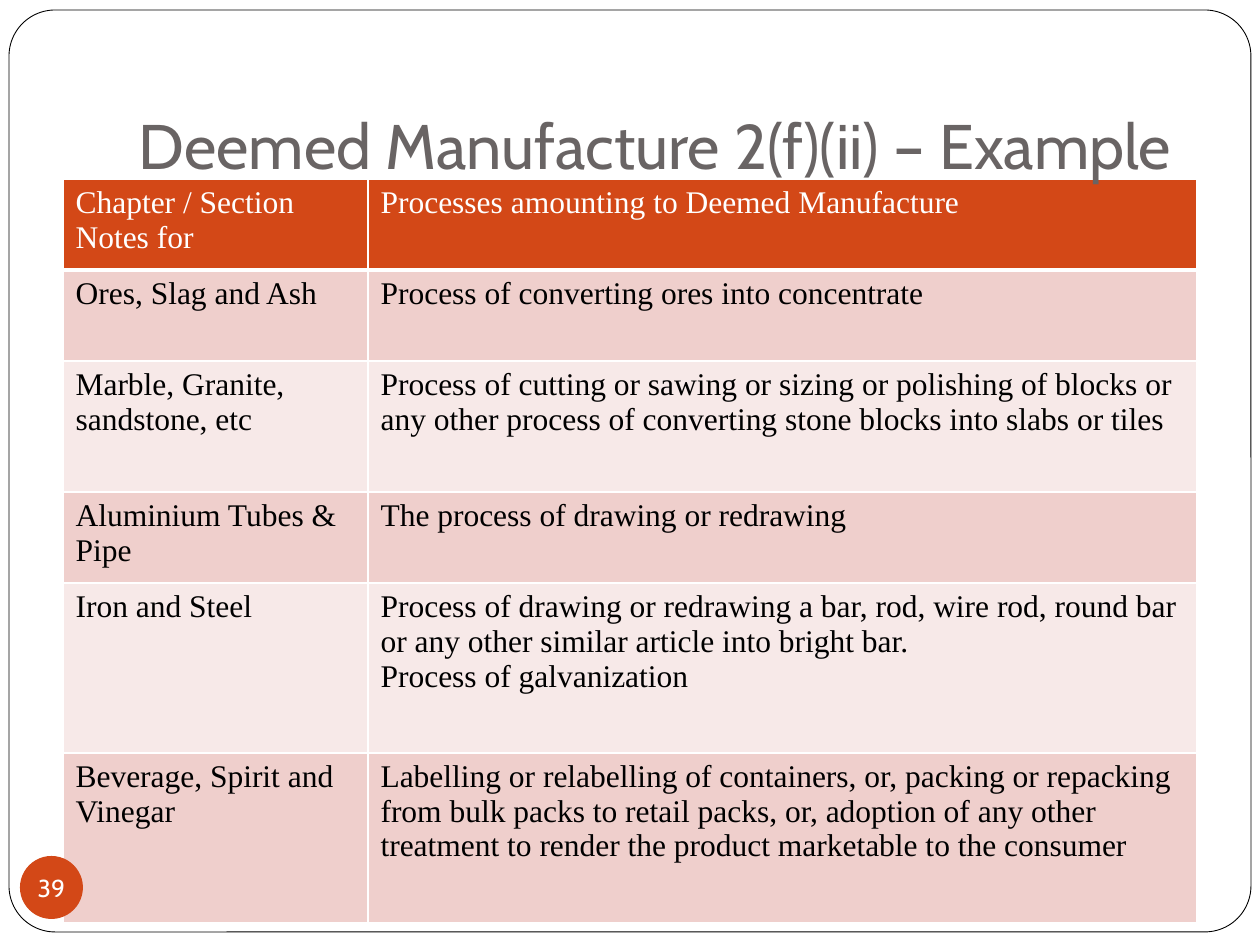
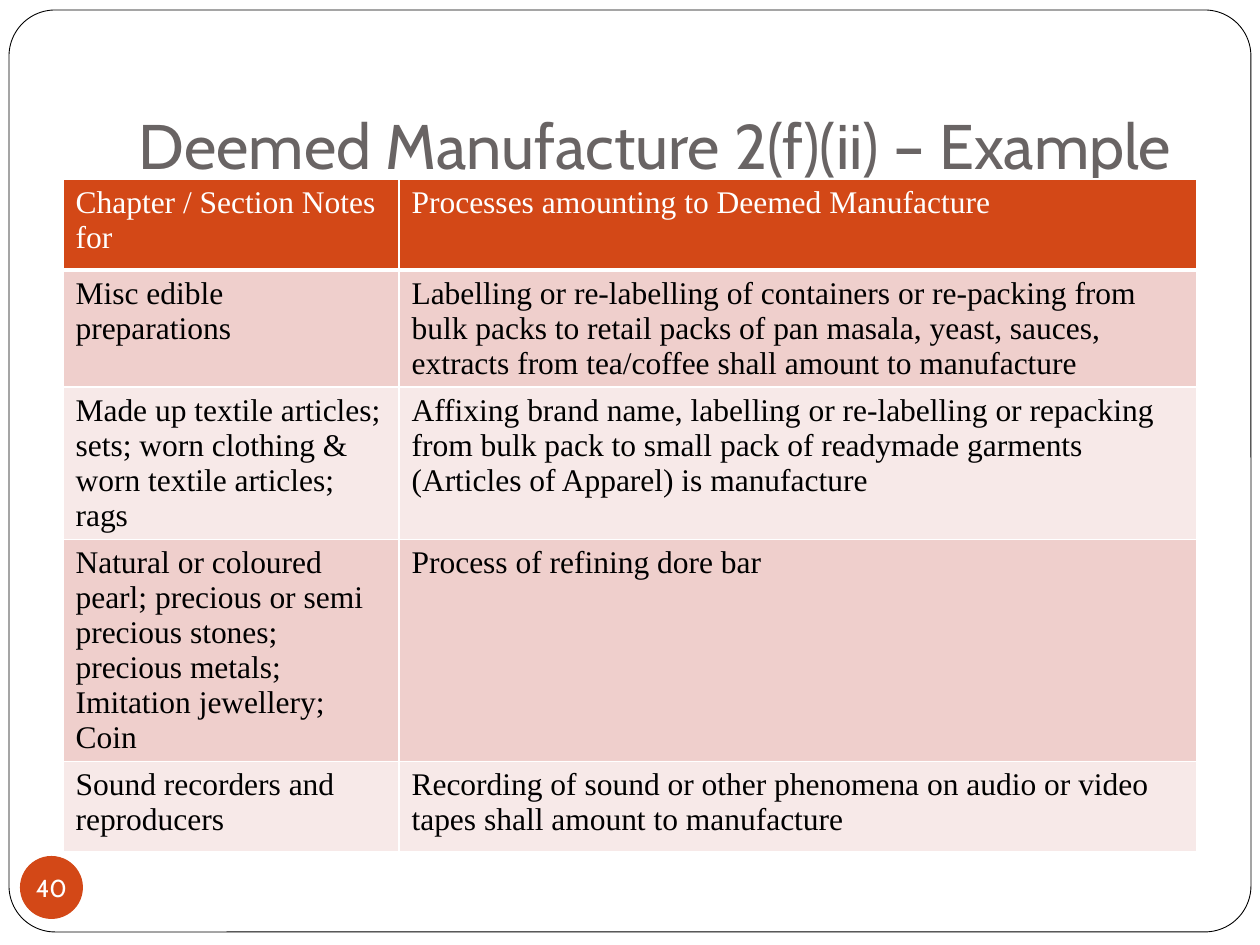
from lxml.etree import SubElement
from pptx import Presentation
from pptx.dml.color import RGBColor
from pptx.enum.shapes import MSO_SHAPE
from pptx.enum.text import MSO_ANCHOR, MSO_AUTO_SIZE, PP_ALIGN
from pptx.oxml.ns import qn
from pptx.util import Emu, Pt

EMU_PER_PX = 914400 / 126
WHITE = RGBColor(0xFF, 0xFF, 0xFF)
BLACK = RGBColor(0x00, 0x00, 0x00)
ORANGE = RGBColor(0xD3, 0x48, 0x17)
TITLE_GRAY = RGBColor(0x69, 0x64, 0x64)
DARK_BAND = RGBColor(0xEF, 0xCF, 0xCC)
LIGHT_BAND = RGBColor(0xF7, 0xE9, 0xE8)
HEADING_FONT = "Cabin"
TABLE_FONT = "Times New Roman"

TITLE = "Deemed Manufacture 2(f)(ii) – Example"
HEADER = ("Chapter / Section Notes for", "Processes amounting to Deemed Manufacture")
MATERIALS = [
    HEADER,
    ("Ores, Slag and Ash", "Process of converting ores into concentrate"),
    ("Marble, Granite, sandstone, etc",
     "Process of cutting or sawing or sizing or polishing of blocks or any other "
     "process of converting stone blocks into slabs or tiles"),
    ("Aluminium Tubes & Pipe", "The process of drawing or redrawing"),
    ("Iron and Steel",
     "Process of drawing or redrawing a bar, rod, wire rod, round bar or any other "
     "similar article into bright bar.\nProcess of galvanization"),
    ("Beverage, Spirit and Vinegar",
     "Labelling or relabelling of containers, or, packing or repacking from bulk packs "
     "to retail packs, or, adoption of any other treatment to render the product "
     "marketable to the consumer"),
]
GOODS = [
    HEADER,
    ("Misc edible preparations",
     "Labelling or re-labelling of containers or re-packing from bulk packs to retail "
     "packs of pan masala, yeast, sauces, extracts from tea/coffee shall amount to "
     "manufacture"),
    ("Made up textile articles; sets; worn clothing & worn textile articles; rags",
     "Affixing brand name, labelling or re-labelling or repacking from bulk pack to "
     "small pack of readymade garments (Articles of Apparel) is manufacture"),
    ("Natural or coloured pearl; precious or semi precious stones; precious metals; "
     "Imitation jewellery; Coin",
     "Process of refining dore bar"),
    ("Sound recorders and reproducers",
     "Recording of sound or other phenomena on audio or video tapes shall amount to "
     "manufacture"),
]


def px(length):
    """Turn a length in pixels into EMU."""
    return Emu(round(length * EMU_PER_PX))


def box(left, top, width, height):
    """Turn a pixel rectangle into EMU lengths."""
    return [px(length) for length in (left, top, width, height)]


def write_text(text_frame, text, size, font, color, alignment=PP_ALIGN.LEFT):
    """Fill a text frame, one paragraph per line, in one format."""
    text_frame.text = text
    for paragraph in text_frame.paragraphs:
        paragraph.alignment = alignment
        for run in paragraph.runs:
            run.font.size = Pt(size)
            run.font.name = font
            run.font.bold = False
            run.font.color.rgb = color


def set_margins(text_frame, left, top, right, bottom):
    """Set the four insets of a text frame in pixels."""
    text_frame.margin_left, text_frame.margin_top = px(left), px(top)
    text_frame.margin_right, text_frame.margin_bottom = px(right), px(bottom)


def bring_to_front(shape):
    """Move a shape above everything else on its slide."""
    shape.element.getparent().append(shape.element)


def add_plain_shape(slide, kind, bounds, fill):
    """Add a flat preset shape without an outline."""
    shape = slide.shapes.add_shape(kind, *box(*bounds))
    shape.shadow.inherit = False
    shape.fill.solid()
    shape.fill.fore_color.rgb = fill
    shape.line.fill.background()
    return shape


def add_frame(slide):
    """Add the rounded outline around the slide."""
    frame = add_plain_shape(slide, MSO_SHAPE.ROUNDED_RECTANGLE, (9, 10, 1242, 922), WHITE)
    frame.adjustments[0] = 0.05
    frame.line.color.rgb = BLACK
    frame.line.width = Pt(0.5)


def place_title(slide, text):
    """Position and format the title placeholder."""
    title = slide.shapes.title
    title.left, title.top, title.width, title.height = box(126, 38, 1071, 157)
    text_frame = title.text_frame
    text_frame.word_wrap = True
    text_frame.auto_size = MSO_AUTO_SIZE.NONE
    text_frame.vertical_anchor = MSO_ANCHOR.BOTTOM
    set_margins(text_frame, 13, 6, 13, 13)
    write_text(text_frame, text, size=36, font=HEADING_FONT, color=TITLE_GRAY)
    bring_to_front(title)


def add_page_number(slide, number):
    """Add the round page number badge."""
    badge = add_plain_shape(slide, MSO_SHAPE.OVAL, (20, 856, 63, 63), ORANGE)
    text_frame = badge.text_frame
    text_frame.word_wrap = False
    text_frame.vertical_anchor = MSO_ANCHOR.MIDDLE
    set_margins(text_frame, 0, 0, 0, 0)
    write_text(text_frame, str(number), size=14, font=HEADING_FONT, color=WHITE,
               alignment=PP_ALIGN.CENTER)


def set_borders(cell, bottom):
    """Draw white cell borders with a chosen bottom width in points."""
    properties = cell._tc.get_or_add_tcPr()
    for side, width in (("L", 1), ("R", 1), ("T", 1), ("B", bottom)):
        line = SubElement(properties, qn(f"a:ln{side}"), w=str(Pt(width)))
        fill = SubElement(line, qn("a:solidFill"))
        SubElement(fill, qn("a:srgbClr"), val=str(WHITE))


def add_process_table(slide, rows, column_widths, row_heights, height):
    """Add the banded table of goods and their processes."""
    graphic_frame = slide.shapes.add_table(
        len(rows), len(column_widths), *box(63, 179, sum(column_widths), height))
    table = graphic_frame.table
    for column, width in zip(table.columns, column_widths):
        column.width = px(width)
    for row, row_height in zip(table.rows, row_heights):
        row.height = px(row_height)
    graphic_frame.height = px(height)
    for row_index, texts in enumerate(rows):
        is_header = row_index == 0
        band = DARK_BAND if row_index % 2 else LIGHT_BAND
        for column_index, text in enumerate(texts):
            cell = table.cell(row_index, column_index)
            set_borders(cell, bottom=3 if is_header else 1)
            cell.fill.solid()
            cell.fill.fore_color.rgb = ORANGE if is_header else band
            write_text(cell.text_frame, text, size=18, font=TABLE_FONT,
                       color=WHITE if is_header else BLACK)


def add_base_slide(presentation):
    """Add a title-only slide with the shared outline."""
    slide = presentation.slides.add_slide(presentation.slide_layouts[5])
    add_frame(slide)
    return slide


def main():
    """Build and save both example slides."""
    presentation = Presentation()
    presentation.slide_width, presentation.slide_height = px(1260), px(945)

    materials_slide = add_base_slide(presentation)
    add_process_table(materials_slide, MATERIALS, (305, 829),
                      (91, 91, 131, 91, 170, 170), height=743)
    place_title(materials_slide, TITLE)
    add_page_number(materials_slide, 39)

    goods_slide = add_base_slide(presentation)
    place_title(goods_slide, TITLE)
    add_process_table(goods_slide, GOODS, (336, 798),
                      (91, 91, 131, 91, 91), height=604)
    add_page_number(goods_slide, 40)

    presentation.save("out.pptx")


if __name__ == "__main__":
    main()
